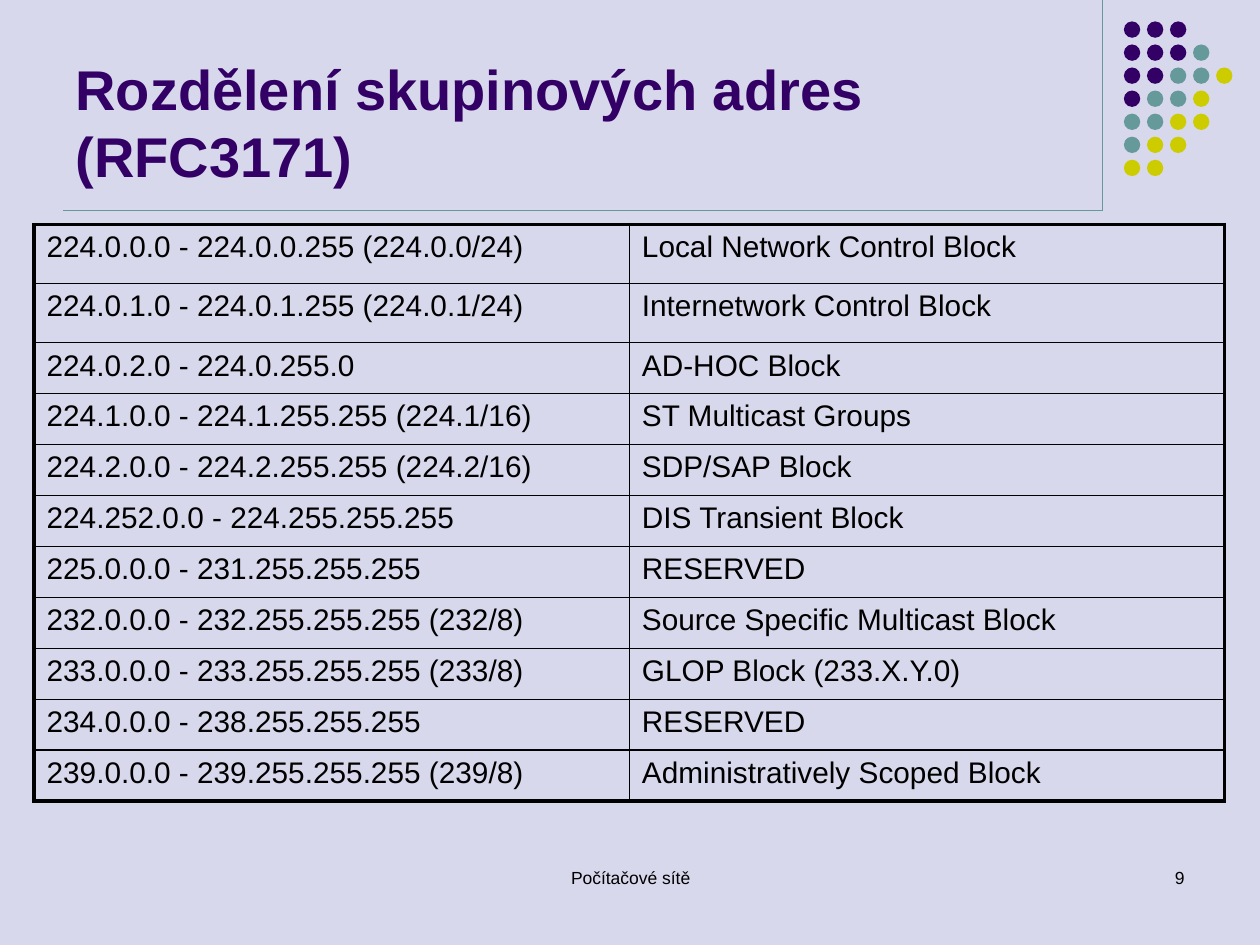
"""Build the slide on the division of multicast group addresses."""
from dataclasses import dataclass

from lxml.etree import Element, SubElement
from pptx import Presentation
from pptx.dml.color import RGBColor
from pptx.enum.shapes import MSO_CONNECTOR, MSO_SHAPE
from pptx.enum.text import MSO_ANCHOR, PP_ALIGN
from pptx.oxml.ns import qn
from pptx.slide import Slide
from pptx.table import _Cell
from pptx.text.text import TextFrame
from pptx.util import Inches, Pt


@dataclass(frozen=True)
class Theme:
    font: str = "Arial"
    back: str = "D8D8EC"
    ink: str = "000000"
    plum: str = "330066"
    teal: str = "669999"
    lime: str = "CCCC00"
    title: int = 32
    body: int = 17
    foot: int = 10
    rule: float = 0.75
    thin: float = 1
    thick: float = 2.25


@dataclass(frozen=True)
class Label:
    text: str
    left: float
    top: float
    width: float
    height: float
    size: int
    color: str
    bold: bool = False
    align: PP_ALIGN = PP_ALIGN.LEFT
    anchor: MSO_ANCHOR = MSO_ANCHOR.TOP


@dataclass(frozen=True)
class Rule:
    x1: float
    y1: float
    x2: float
    y2: float


@dataclass(frozen=True)
class Block:
    span: str
    use: str


THEME = Theme()
LABELS = [
    Label("Počítačové sítě", 3.42, 6.83, 3.17, 0.5, THEME.foot, THEME.ink,
          align=PP_ALIGN.CENTER),
    Label("9", 7.17, 6.83, 2.33, 0.5, THEME.foot, THEME.ink,
          align=PP_ALIGN.RIGHT),
    Label("Rozdělení skupinových adres (RFC3171)", 0.5, 0.13, 8.25, 1.42,
          THEME.title, THEME.plum, True, anchor=MSO_ANCHOR.BOTTOM),
]
RULES = [Rule(8.75, 0, 8.75, 1.67), Rule(0.5, 1.67, 8.75, 1.67)]
DOTS = ["PPP", "PPPT", "PPTTL", "PTTL", "TTLL", "TLL", "LL"]
TINTS = {"P": THEME.plum, "T": THEME.teal, "L": THEME.lime}
BLOCKS = [
    Block("224.0.0.0 - 224.0.0.255 (224.0.0/24)", "Local Network Control Block"),
    Block("224.0.1.0 - 224.0.1.255 (224.0.1/24)", "Internetwork Control Block"),
    Block("224.0.2.0 - 224.0.255.0", "AD-HOC Block"),
    Block("224.1.0.0 - 224.1.255.255 (224.1/16)", "ST Multicast Groups"),
    Block("224.2.0.0 - 224.2.255.255 (224.2/16)", "SDP/SAP Block"),
    Block("224.252.0.0 - 224.255.255.255", "DIS Transient Block"),
    Block("225.0.0.0 - 231.255.255.255", "RESERVED"),
    Block("232.0.0.0 - 232.255.255.255 (232/8)", "Source Specific Multicast Block"),
    Block("233.0.0.0 - 233.255.255.255 (233/8)", "GLOP Block (233.X.Y.0)"),
    Block("234.0.0.0 - 238.255.255.255", "RESERVED"),
    Block("239.0.0.0 - 239.255.255.255 (239/8)", "Administratively Scoped Block"),
]


def write(frame: TextFrame, text: str, size: int, color: str,
          bold: bool = False, align: PP_ALIGN = PP_ALIGN.LEFT) -> None:
    frame.text = text
    para = frame.paragraphs[0]
    para.alignment = align
    font = para.runs[0].font
    font.name, font.size, font.bold = THEME.font, Pt(size), bold
    font.color.rgb = RGBColor.from_string(color)


def add_label(slide: Slide, label: Label) -> None:
    box = slide.shapes.add_textbox(Inches(label.left), Inches(label.top),
                                   Inches(label.width), Inches(label.height))
    frame = box.text_frame
    frame.word_wrap = True
    frame.vertical_anchor = label.anchor
    write(frame, label.text, label.size, label.color, label.bold, label.align)


def add_rule(slide: Slide, rule: Rule) -> None:
    line = slide.shapes.add_connector(
        MSO_CONNECTOR.STRAIGHT, Inches(rule.x1), Inches(rule.y1),
        Inches(rule.x2), Inches(rule.y2))
    line.line.color.rgb = RGBColor.from_string(THEME.teal)
    line.line.width = Pt(THEME.rule)
    SubElement(line._element.spPr, qn("a:effectLst"))


def add_dots(slide: Slide, left: float = 8.92, top: float = 0.17,
             step: float = 0.183, size: float = 0.13) -> None:
    for row, marks in enumerate(DOTS):
        for col, mark in enumerate(marks):
            dot = slide.shapes.add_shape(
                MSO_SHAPE.OVAL, Inches(left + col * step),
                Inches(top + row * step), Inches(size), Inches(size))
            dot.shadow.inherit = False
            dot.fill.solid()
            dot.fill.fore_color.rgb = RGBColor.from_string(TINTS[mark])
            dot.line.fill.background()


def set_edges(cell: _Cell, edges: dict[str, bool]) -> None:
    props = cell._tc.get_or_add_tcPr()
    for spot, (side, outer) in enumerate(edges.items()):
        width = Pt(THEME.thick if outer else THEME.thin)
        line = Element(qn(f"a:ln{side}"), w=str(width))
        fill = SubElement(line, qn("a:solidFill"))
        SubElement(fill, qn("a:srgbClr"), val=THEME.ink)
        props.insert(spot, line)


def add_grid(slide: Slide, width: float = 9.45, height: float = 4.58,
             tall: float = 0.47) -> None:
    count = len(BLOCKS)
    table = slide.shapes.add_table(count, 2, Inches(0.27), Inches(1.78),
                                   Inches(width), Inches(height)).table
    table.first_row = table.horz_banding = False
    short = (height - 2 * tall) / (count - 2)
    for row, block in enumerate(BLOCKS):
        table.rows[row].height = Inches(tall if row < 2 else short)
        for col, text in enumerate((block.span, block.use)):
            cell = table.cell(row, col)
            cell.fill.background()
            write(cell.text_frame, text, THEME.body, THEME.ink)
            set_edges(cell, {"L": col == 0, "R": col == 1,
                             "T": row == 0, "B": row == count - 1})


def main() -> None:
    deck = Presentation()
    deck.slide_width, deck.slide_height = Inches(10), Inches(7.5)
    slide = deck.slides.add_slide(deck.slide_layouts[6])
    fill = slide.background.fill
    fill.solid()
    fill.fore_color.rgb = RGBColor.from_string(THEME.back)
    for rule in RULES:
        add_rule(slide, rule)
    add_dots(slide)
    for label in LABELS:
        add_label(slide, label)
    add_grid(slide)
    deck.save("out.pptx")


if __name__ == "__main__":
    main()
